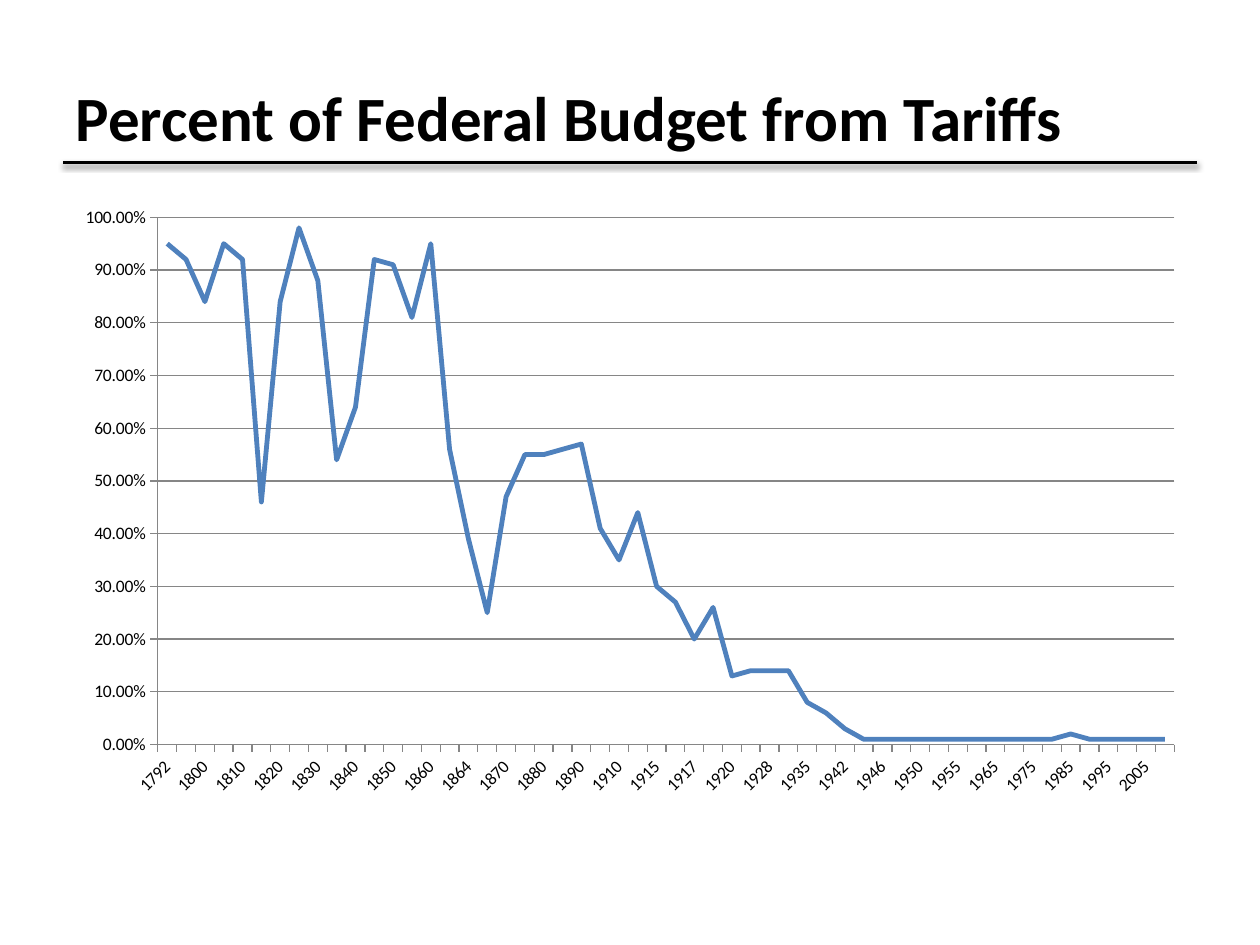
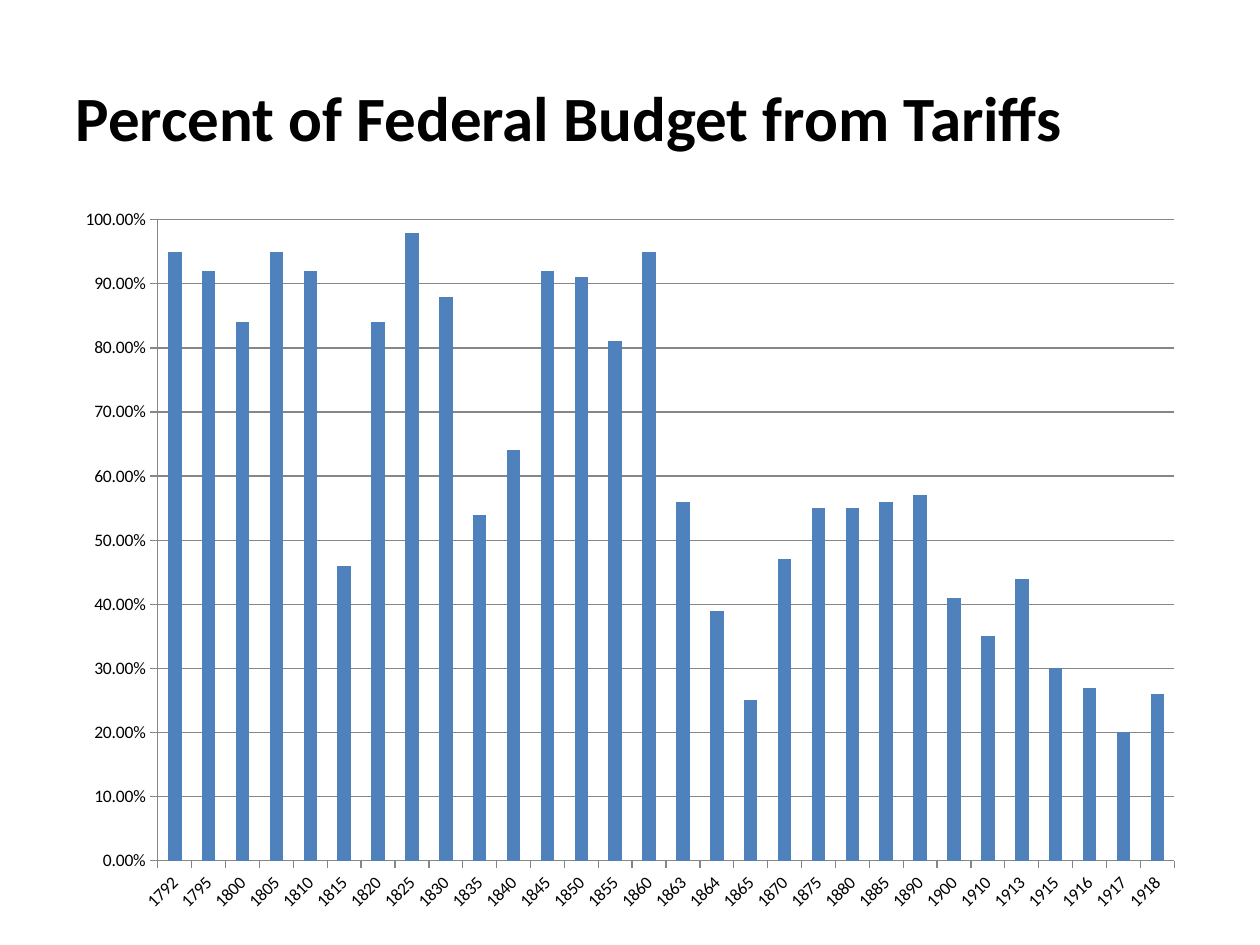
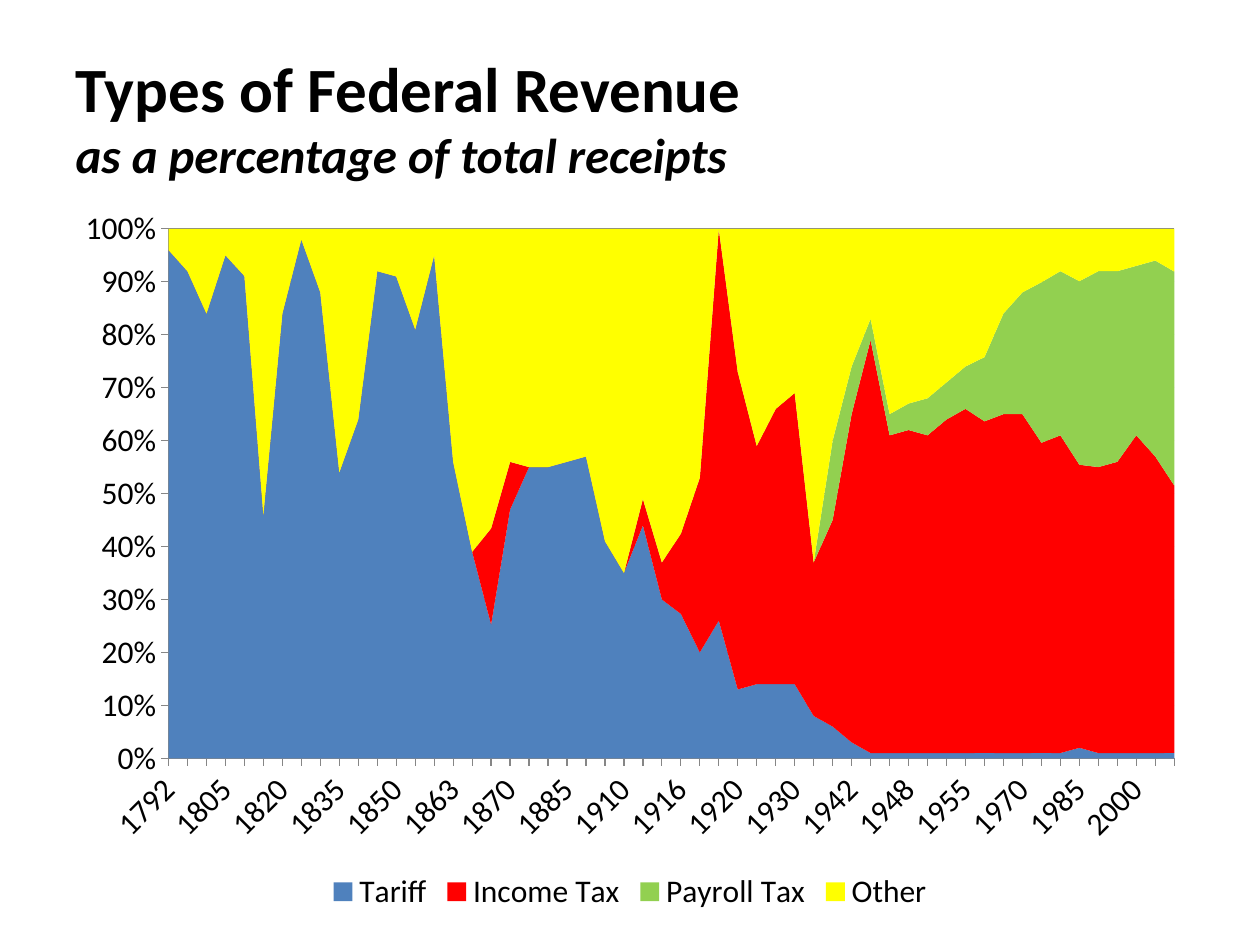
from lxml.etree import SubElement
from pptx import Presentation
from pptx.chart.data import CategoryChartData as Data
from pptx.dml.color import RGBColor
from pptx.enum.chart import XL_CHART_TYPE as Kind, XL_LEGEND_POSITION as Spot, XL_TICK_MARK as Tick
from pptx.enum.shapes import MSO_CONNECTOR as Link
from pptx.enum.text import MSO_ANCHOR as Anchor, MSO_AUTO_SIZE as Fit, PP_ALIGN as Align
from pptx.oxml.ns import qn
from pptx.util import Inches, Pt

FONT = "Calibri"
BLACK, GRAY, BLUE = "000000", "868686", "4F81BD"
RED, GREEN, YELLOW = "FF0000", "92D050", "FFFF00"


def paint(part, color):
    if hasattr(part, "solid"):
        part.solid()
        part.fore_color.rgb = RGBColor.from_string(color)
    else:
        part.color.rgb = RGBColor.from_string(color)


years = """1792 1795 1800 1805 1810 1815 1820 1825 1830 1835 1840 1845 1850 1855
1860 1863 1864 1865 1870 1875 1880 1885 1890 1900 1910 1913 1915 1916 1917 1918
1920 1925 1928 1930 1935 1940 1942 1944 1946 1948 1950 1951 1955 1960 1965 1970
1975 1980 1985 1990 1995 2000 2005 2010""".split()

tariff = [95, 92, 84, 95, 92, 46, 84, 98, 88, 54, 64, 92, 91, 81, 95, 56, 39, 25,
          47, 55, 55, 56, 57, 41, 35, 44, 30, 27, 20, 26, 13, 14, 14, 14, 8, 6, 3,
          *[1] * 11, 2, *[1] * 5]
income = [*[0] * 17, 18, 9, *[0] * 6, 5, 7, 15, 33, 74, 60, 45, 52, 55, 29, 39,
          62, 78, 60, 61, 60, 63, 65, 62, 64, 64, 58, 60, 54, 54, 55, 60, 56, 50]
payroll = [*[0] * 35, 15, 9, 4, 4, 5, 7, 7, 8, 12, 19, 23, 30, 31, 35, 37, 36,
           32, 37, 40]
other = [4, 8, 16, 5, 9, 54, 16, 2, 12, 46, 36, 8, 9, 19, 5, 44, 61, 56, 44, 45,
         45, 44, 43, 59, 65, 51, 63, 57, 47, 0, 27, 41, 34, 31, 63, 40, 26, 17,
         35, 33, 32, 29, 26, 24, 16, 12, 10, 8, 10, 8, 8, 7, 6, 8]

share = [value / 100 for value in tariff]
budget = "Percent of Federal Budget from Tariffs"
types = [("Tariff", [96] + tariff[1:], BLUE), ("Income Tax", income, RED),
         ("Payroll Tax", payroll, GREEN), ("Other", other, YELLOW)]

pages = [
    (budget, "", Kind.LINE, 4.86, 10, "0.00%", years, [("Series 1", share, BLUE)]),
    (budget, "", Kind.COLUMN_CLUSTERED, 5.8, 10, "0.00%", years[:30],
     [("Series 1", share[:30], BLUE)]),
    ("Types of Federal Revenue", "as a percentage of total receipts",
     Kind.AREA_STACKED_100, 5.73, 18, "0%", years, types),
]

deck = Presentation()
deck.slide_width, deck.slide_height = Inches(10), Inches(7.5)

for head, sub, kind, height, size, form, cats, rows in pages:
    slide = deck.slides.add_slide(deck.slide_layouts[5])

    title = slide.shapes.title
    title.left, title.top = Inches(0.5), Inches(0.3)
    title.width, title.height = Inches(9), Inches(1.25)
    frame = title.text_frame
    frame.word_wrap, frame.auto_size = True, Fit.NONE
    frame.vertical_anchor = Anchor.MIDDLE
    para = frame.paragraphs[0]
    para.alignment = Align.LEFT
    para.font.name, para.font.size, para.font.bold = FONT, Pt(36), True
    paint(para.font, BLACK)
    para.add_run().text = head
    if sub:
        para.add_line_break()
        run = para.add_run()
        run.text = sub
        run.font.size, run.font.italic = Pt(28), True

    if kind == Kind.LINE:
        rule = slide.shapes.add_connector(
            Link.STRAIGHT, Inches(0.5), Inches(1.29), Inches(9.5), Inches(1.29))
        paint(rule.line, BLACK)
        rule.line.width = Pt(2)
        glow = SubElement(rule._element.spPr, qn("a:effectLst"))
        shade = SubElement(glow, qn("a:outerShdw"), blurRad=str(Pt(3.1)),
                           dist=str(Pt(1.6)), dir="5400000", rotWithShape="0")
        tint = SubElement(shade, qn("a:srgbClr"), val=BLACK)
        SubElement(tint, qn("a:alpha"), val="38000")

    data = Data()
    data.categories = cats
    for name, values, color in rows:
        data.add_series(name, values)
    chart = slide.shapes.add_chart(
        kind, Inches(0.5), Inches(1.55), Inches(9), Inches(height), data).chart
    chart.has_title = False
    chart.font.name, chart.font.size = FONT, Pt(size)
    paint(chart.font, BLACK)

    plot = chart.plots[0]
    plot.vary_by_categories = False
    for series, (name, values, color) in zip(plot.series, rows):
        if kind == Kind.LINE:
            series.smooth = False
            series.format.line.width = Pt(2.75)
            paint(series.format.line, color)
        else:
            paint(series.format.fill, color)
    if kind == Kind.COLUMN_CLUSTERED:
        plot.gap_width = 150

    base, scale = chart.category_axis, chart.value_axis
    scale.has_major_gridlines = True
    scale.minimum_scale, scale.maximum_scale, scale.major_unit = 0, 1, 0.1
    scale.tick_labels.number_format = form
    scale.tick_labels.number_format_is_linked = False
    for line in (base.format.line, scale.format.line, scale.major_gridlines.format.line):
        paint(line, GRAY)
        line.width = Pt(0.75)
    for axis in (base, scale):
        axis.major_tick_mark, axis.minor_tick_mark = Tick.OUTSIDE, Tick.NONE
    base.tick_labels.font.size = Pt(size)
    base._element.find(qn("c:txPr")).find(qn("a:bodyPr")).set("rot", "-2700000")

    chart.has_legend = len(rows) > 1
    if chart.has_legend:
        chart.legend.position = Spot.BOTTOM
        chart.legend.include_in_layout = False

deck.save("out.pptx")
